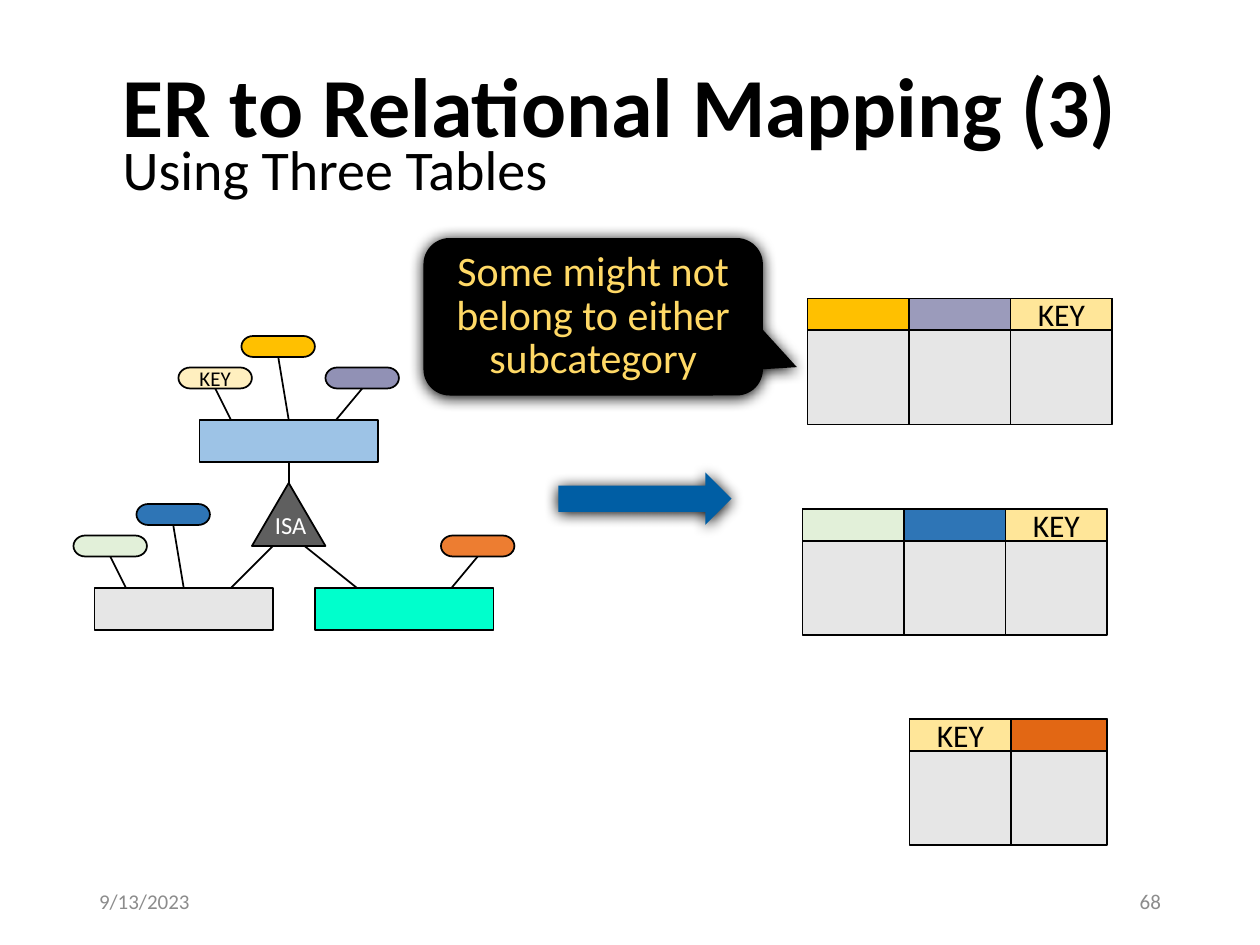
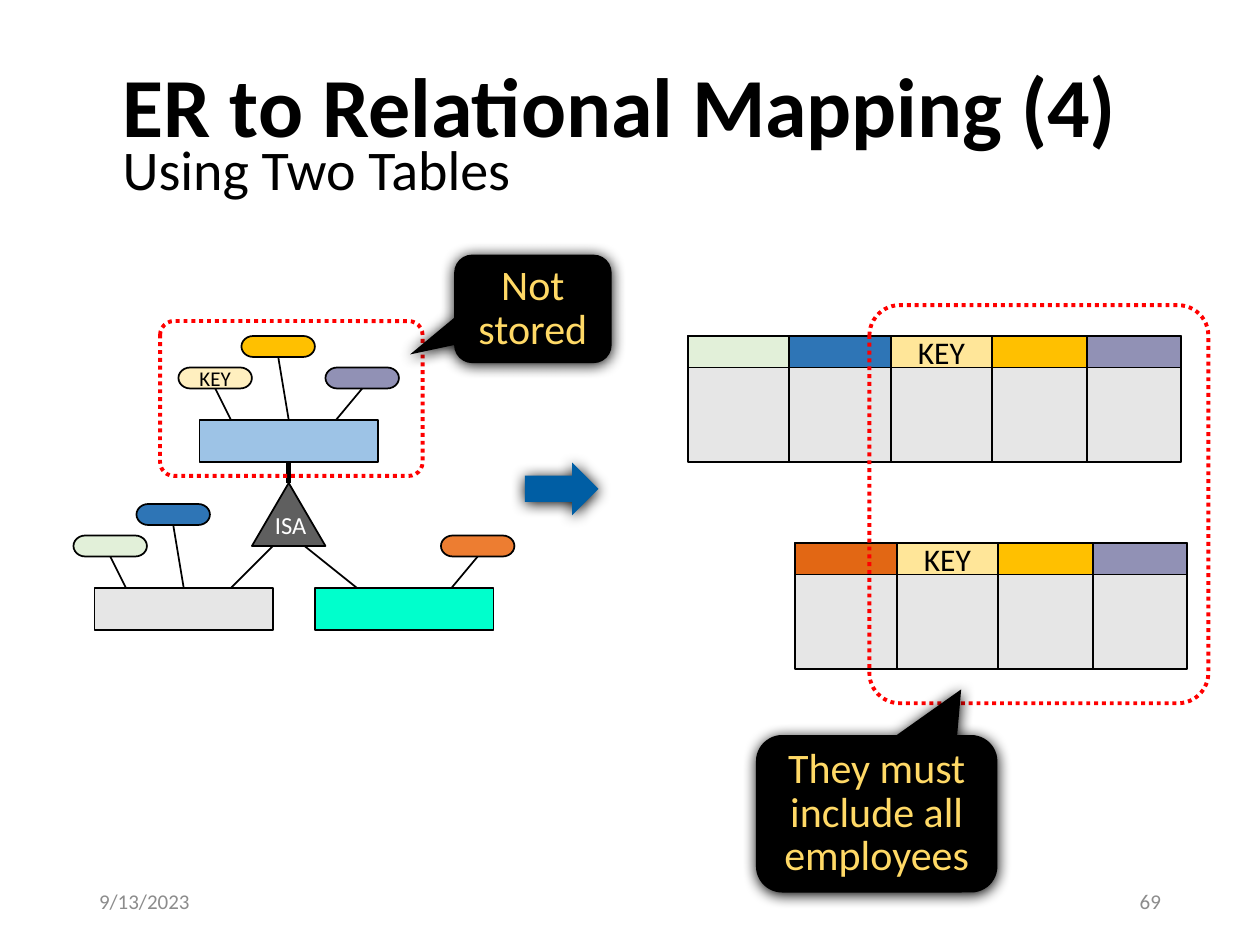
from dataclasses import dataclass
from itertools import accumulate
from typing import NamedTuple

from lxml.etree import SubElement
from pptx import Presentation
from pptx.dml.color import RGBColor
from pptx.enum.dml import MSO_LINE
from pptx.enum.shapes import MSO_CONNECTOR, MSO_SHAPE
from pptx.enum.text import MSO_ANCHOR, MSO_AUTO_SIZE, PP_ALIGN
from pptx.oxml.ns import qn
from pptx.shapes.autoshape import Shape
from pptx.shapes.connector import Connector
from pptx.shapes.shapetree import GroupShapes, SlideShapes
from pptx.slide import Slide
from pptx.text.text import TextFrame
from pptx.util import Pt

Shapes = SlideShapes | GroupShapes


@dataclass(frozen=True)
class Theme:
    font: str = "Calibri"
    ink: str = "000000"
    white: str = "FFFFFF"
    muted: str = "8C8C8C"
    gray: str = "E6E6E6"
    dark_gray: str = "5F5F5F"
    gold: str = "FFC000"
    key: str = "FFE699"
    pale_key: str = "FFEFBF"
    violet: str = "9191B5"
    light_violet: str = "9B9BBB"
    green: str = "E2F0D9"
    blue: str = "2E75B6"
    light_blue: str = "9DC3E6"
    orange: str = "ED7D31"
    dark_orange: str = "E26714"
    teal: str = "00FFCC"
    arrow: str = "005EA4"
    callout_text: str = "FFD966"
    highlight: str = "FF0000"
    title_size: float = 48
    subtitle_size: float = 32
    callout_size: float = 24
    header_size: float = 18
    isa_size: float = 14
    small_size: float = 12
    callout_spacing: float = 25
    line: float = 1
    thick_line: float = 3
    highlight_line: float = 2.25


THEME = Theme()
OVAL_WIDTH, OVAL_HEIGHT = 42, 12
ENTITY_WIDTH, ENTITY_HEIGHT = 102, 24
TABLE_HEIGHT, HEADER_HEIGHT = 72, 18


class Box(NamedTuple):
    left: float
    top: float
    width: float
    height: float


class Point(NamedTuple):
    x: float
    y: float


class Attribute(NamedTuple):
    left: float
    top: float
    color: str
    target_x: float
    label: str = ""


class Entity(NamedTuple):
    left: float
    top: float
    color: str
    attributes: tuple[Attribute, ...]


class Column(NamedTuple):
    color: str
    width: float = 58
    label: str = ""


class Table(NamedTuple):
    left: float
    top: float
    columns: tuple[Column, ...]


class Callout(NamedTuple):
    text: str
    box: Box
    tip: tuple[float, float]


@dataclass(frozen=True)
class MappingSlide:
    title: str
    subtitle: str
    number: int
    arrow: Box
    tables: tuple[Table, ...]
    callouts: tuple[Callout, ...]
    highlights: tuple[Box, ...] = ()
    isa_line: float = THEME.line


KEY = Column(THEME.key, label="KEY")
GREEN, BLUE = Column(THEME.green), Column(THEME.blue)
INHERITED = (KEY, Column(THEME.gold, 54), Column(THEME.violet, 54))

EMPLOYEE = Entity(114, 240, THEME.light_blue, (
    Attribute(102, 210, THEME.pale_key, 132, "KEY"),
    Attribute(138, 192, THEME.gold, 165),
    Attribute(186, 210, THEME.violet, 192),
))
SUBCATEGORIES = (
    Entity(54, 336, THEME.gray, (
        Attribute(42, 306, THEME.green, 72),
        Attribute(78, 288, THEME.blue, 105),
    )),
    Entity(180, 336, THEME.teal, (Attribute(252, 306, THEME.orange, 258),)),
)
ISA = Box(144, 276, 42, 36)
ISA_LEGS = ((Point(156, 312), Point(132, 336)), (Point(174, 312), Point(204, 336)))

SLIDES = (
    MappingSlide(
        "ER to Relational Mapping (3)", "Using Three Tables", 68,
        arrow=Box(319, 270, 99, 30),
        tables=(
            Table(519.8, 411, (KEY, Column(THEME.dark_orange, 55))),
            Table(458.6, 291, (GREEN, BLUE, KEY)),
            Table(461.5, 170.6, (Column(THEME.gold), Column(THEME.light_violet), KEY)),
        ),
        callouts=(Callout("Some might not belong to either subcategory",
                          Box(242, 136, 194, 90), (0.6, 0.32)),),
    ),
    MappingSlide(
        "ER to Relational Mapping (4)", "Using Two Tables", 69,
        arrow=Box(300, 264.4, 42, 30),
        tables=(
            Table(393, 192, (GREEN, BLUE, *INHERITED)),
            Table(454.4, 310.3, (Column(THEME.dark_orange), *INHERITED)),
        ),
        callouts=(
            Callout("They must include all employees", Box(432, 420, 138, 90), (0.35, -0.79)),
            Callout("Not stored", Box(259.5, 145.5, 90, 62), (-0.78, 0.42)),
        ),
        highlights=(Box(496.8, 174.4, 193.7, 227.5), Box(91.5, 183.5, 150, 88.5)),
        isa_line=THEME.thick_line,
    ),
)


def rgb(color: str) -> RGBColor:
    return RGBColor.from_string(color)


def write(frame: TextFrame, text: str, size: float, color: str = THEME.ink,
          alignment: PP_ALIGN = PP_ALIGN.LEFT, bold: bool = False) -> None:
    frame.text = text
    paragraph = frame.paragraphs[0]
    paragraph.alignment = alignment
    font = paragraph.runs[0].font
    font.name, font.size, font.bold = THEME.font, Pt(size), bold
    font.color.rgb = rgb(color)


def add_text(shapes: Shapes, box: Box, text: str, size: float, color: str = THEME.ink,
             alignment: PP_ALIGN = PP_ALIGN.LEFT,
             anchor: MSO_ANCHOR = MSO_ANCHOR.TOP) -> None:
    frame = shapes.add_textbox(*map(Pt, box)).text_frame
    frame.word_wrap = False
    frame.vertical_anchor = anchor
    write(frame, text, size, color, alignment)


def add_block(shapes: Shapes, kind: MSO_SHAPE, box: Box, fill: str | None,
              line: str | None = THEME.ink, line_width: float = THEME.line) -> Shape:
    """Add a flat preset shape; None leaves out the fill or the outline."""
    shape = shapes.add_shape(kind, *map(Pt, box))
    shape.shadow.inherit = False
    if fill:
        shape.fill.solid()
        shape.fill.fore_color.rgb = rgb(fill)
    else:
        shape.fill.background()
    if line:
        shape.line.color.rgb = rgb(line)
        shape.line.width = Pt(line_width)
    else:
        shape.line.fill.background()
    return shape


def add_label(shape: Shape, text: str, size: float) -> None:
    frame = shape.text_frame
    frame.word_wrap = False
    frame.vertical_anchor = MSO_ANCHOR.MIDDLE
    write(frame, text, size, alignment=PP_ALIGN.CENTER)


def add_line(shapes: Shapes, start: Point, end: Point, width: float = THEME.line) -> Connector:
    line = shapes.add_connector(MSO_CONNECTOR.STRAIGHT, *map(Pt, (*start, *end)))
    line.line.color.rgb = rgb(THEME.ink)
    line.line.width = Pt(width)
    SubElement(line._element.spPr, qn("a:effectLst"))
    return line


def add_soft_shadow(shape: Shape) -> None:
    effects = shape._element.spPr.find(qn("a:effectLst"))
    shadow = SubElement(effects, qn("a:outerShdw"), blurRad=str(Pt(8.5)), dist=str(Pt(1)),
                        dir="5400000", algn="ctr", rotWithShape="0")
    SubElement(shadow, qn("a:srgbClr"), val=THEME.ink)


def add_entity(shapes: Shapes, entity: Entity) -> Shape:
    box = Box(entity.left, entity.top, ENTITY_WIDTH, ENTITY_HEIGHT)
    rectangle = add_block(shapes, MSO_SHAPE.FLOWCHART_PROCESS, box, entity.color)
    for attribute in entity.attributes:
        oval_box = Box(attribute.left, attribute.top, OVAL_WIDTH, OVAL_HEIGHT)
        oval = add_block(shapes, MSO_SHAPE.FLOWCHART_TERMINATOR, oval_box, attribute.color)
        if attribute.label:
            add_label(oval, attribute.label, THEME.small_size)
        start = Point(attribute.left + OVAL_WIDTH / 2, attribute.top + OVAL_HEIGHT)
        line = add_line(shapes, start, Point(attribute.target_x, entity.top))
        line.begin_connect(oval, 2)
        if attribute.target_x == entity.left + ENTITY_WIDTH / 2:
            line.end_connect(rectangle, 0)
    return rectangle


def add_er_diagram(slide: Slide, isa_line: float) -> None:
    shapes = slide.shapes.add_group_shape().shapes
    employee = add_entity(shapes, EMPLOYEE)
    for subcategory in SUBCATEGORIES:
        add_entity(shapes, subcategory)
    triangle = add_block(shapes, MSO_SHAPE.ISOSCELES_TRIANGLE, ISA, THEME.dark_gray)
    apex_x = ISA.left + ISA.width / 2
    stem = add_line(shapes, Point(apex_x, ISA.top),
                    Point(apex_x, EMPLOYEE.top + ENTITY_HEIGHT), isa_line)
    stem.begin_connect(triangle, 0)
    stem.end_connect(employee, 2)
    for start, end in ISA_LEGS:
        add_line(shapes, start, end)
    add_text(shapes, Box(150, 288, 32.4, 24.5), "ISA", THEME.isa_size, THEME.white)


def add_relation(slide: Slide, table: Table) -> None:
    """Draw a table schema: coloured header cells above an empty body."""
    shapes = slide.shapes.add_group_shape().shapes
    left, top, columns = table
    edges = list(accumulate((column.width for column in columns), initial=left))
    add_block(shapes, MSO_SHAPE.RECTANGLE,
              Box(left, top, edges[-1] - left, TABLE_HEIGHT), THEME.gray)
    for column, edge in zip(columns, edges):
        cell = add_block(shapes, MSO_SHAPE.FLOWCHART_PROCESS,
                         Box(edge, top, column.width, HEADER_HEIGHT), column.color)
        if column.label:
            add_label(cell, column.label, THEME.header_size)
    for edge in edges[1:-1]:
        add_line(shapes, Point(edge, top), Point(edge, top + TABLE_HEIGHT))


def add_callout(slide: Slide, callout: Callout) -> None:
    shape = add_block(slide.shapes, MSO_SHAPE.ROUNDED_RECTANGULAR_CALLOUT,
                      callout.box, THEME.ink, line=None)
    shape.adjustments[0], shape.adjustments[1] = callout.tip
    add_soft_shadow(shape)
    frame = shape.text_frame
    frame.word_wrap = True
    frame.vertical_anchor = MSO_ANCHOR.MIDDLE
    write(frame, callout.text, THEME.callout_size, THEME.callout_text, PP_ALIGN.CENTER)
    frame.paragraphs[0].line_spacing = Pt(THEME.callout_spacing)


def add_highlight(slide: Slide, box: Box) -> None:
    frame = add_block(slide.shapes, MSO_SHAPE.ROUNDED_RECTANGLE, box, None,
                      THEME.highlight, THEME.highlight_line)
    frame.adjustments[0] = 0.09
    frame.line.dash_style = MSO_LINE.ROUND_DOT


def add_titles_and_footer(slide: Slide, content: MappingSlide) -> None:
    title = slide.shapes.title
    title.left, title.top, title.width, title.height = map(Pt, Box(63, 30, 612, 66))
    frame = title.text_frame
    frame.auto_size = MSO_AUTO_SIZE.NONE
    frame.vertical_anchor = MSO_ANCHOR.MIDDLE
    write(frame, content.title, THEME.title_size, bold=True)
    frame.paragraphs[0].line_spacing = 0.9
    add_text(slide.shapes, Box(63, 73.5, 260, 46), content.subtitle, THEME.subtitle_size)
    for left, text, alignment in ((49.5, "9/13/2023", PP_ALIGN.LEFT),
                                  (508.5, str(content.number), PP_ALIGN.RIGHT)):
        add_text(slide.shapes, Box(left, 500.5, 162, 28.75), text, THEME.small_size,
                 THEME.muted, alignment, MSO_ANCHOR.MIDDLE)


def add_mapping_slide(presentation: Presentation, content: MappingSlide) -> None:
    slide = presentation.slides.add_slide(presentation.slide_layouts.get_by_name("Title Only"))
    add_titles_and_footer(slide, content)
    arrow = add_block(slide.shapes, MSO_SHAPE.RIGHT_ARROW, content.arrow, THEME.arrow, line=None)
    add_soft_shadow(arrow)
    add_er_diagram(slide, content.isa_line)
    for table in content.tables:
        add_relation(slide, table)
    for box in content.highlights:
        add_highlight(slide, box)
    for callout in content.callouts:
        add_callout(slide, callout)


def main() -> None:
    presentation = Presentation()
    presentation.slide_width, presentation.slide_height = Pt(720), Pt(540)
    for content in SLIDES:
        add_mapping_slide(presentation, content)
    presentation.save("out.pptx")


if __name__ == "__main__":
    main()
